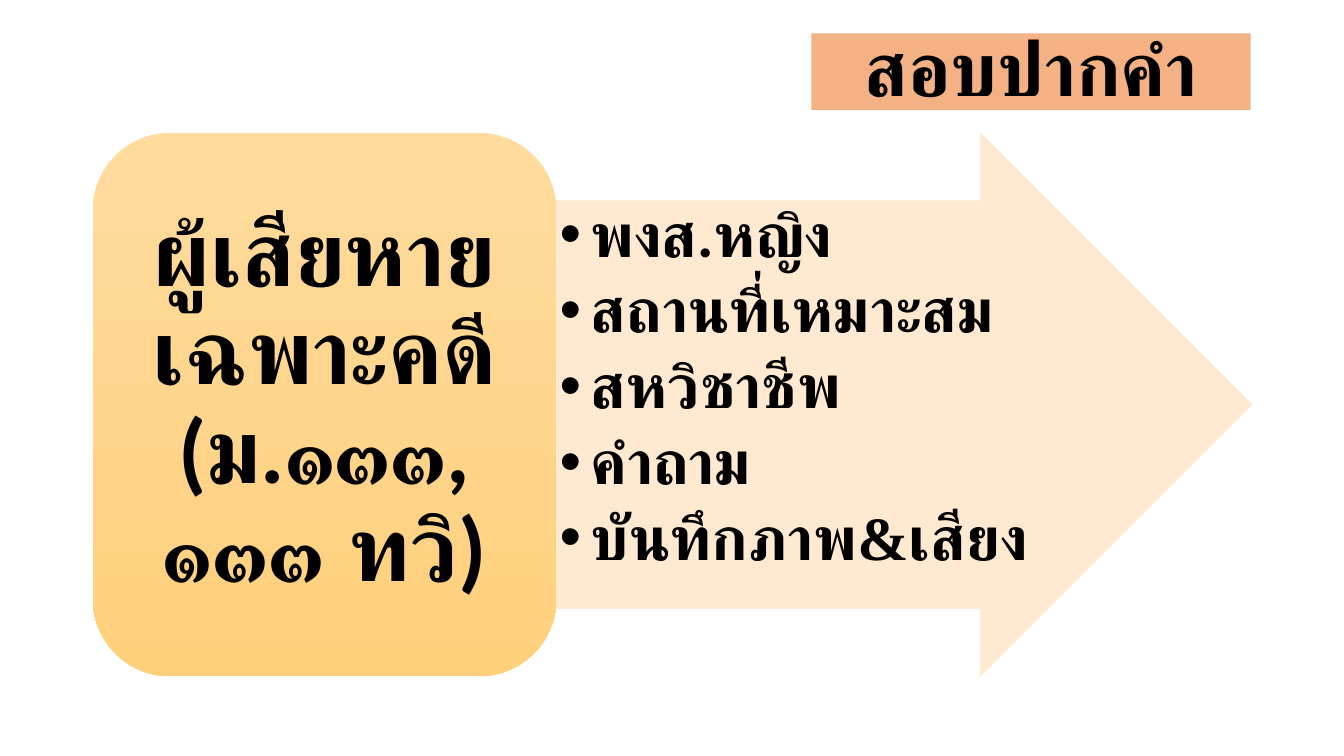
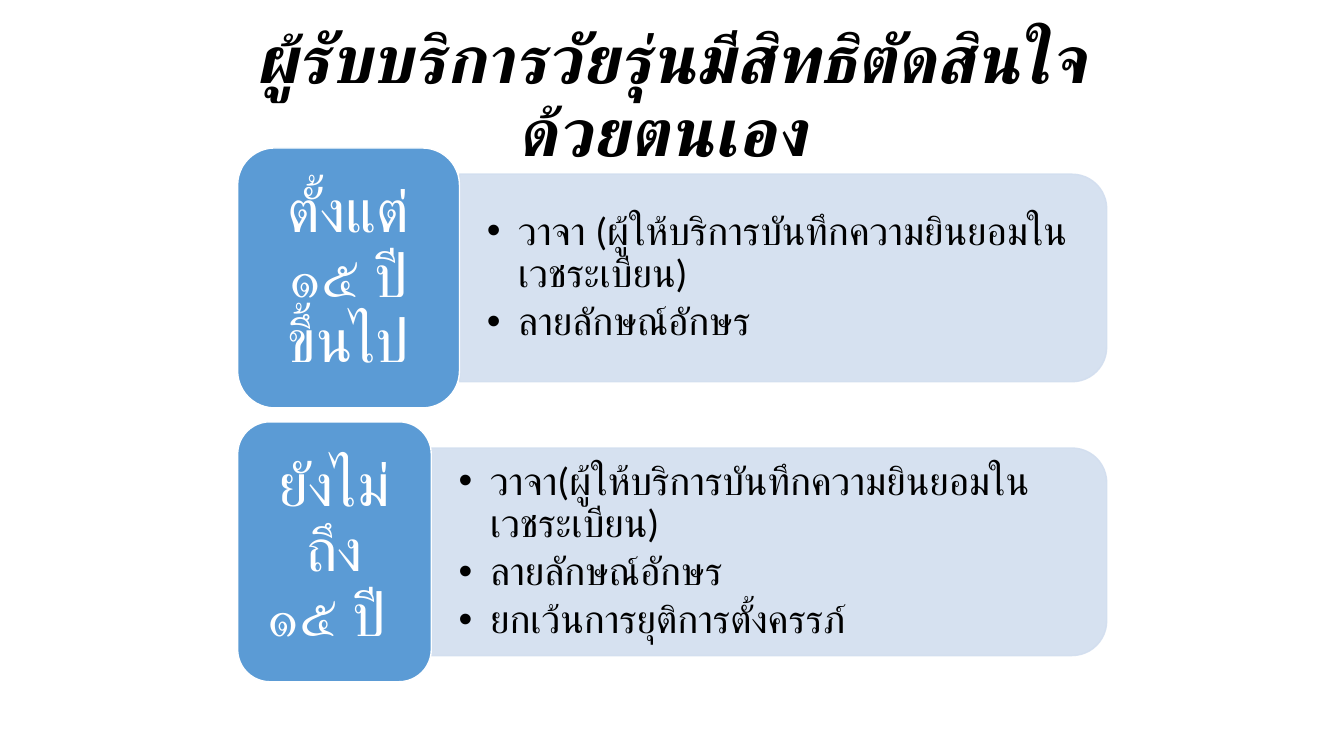
from lxml.etree import SubElement
from pptx import Presentation
from pptx.dml.color import RGBColor
from pptx.enum.lang import MSO_LANGUAGE_ID
from pptx.enum.shapes import MSO_SHAPE
from pptx.enum.text import MSO_ANCHOR, MSO_AUTO_SIZE, PP_ALIGN
from pptx.oxml.ns import qn
from pptx.util import Cm, Pt

COLORS = {
    "text": "000000",
    "white": "FFFFFF",
    "title_band": "F4B183",
    "arrow": "FFE8CC",
    "victim_top": "FFDB9E",
    "victim_bottom": "FFD07C",
    "age": "5B9BD5",
    "panel": "D2DEEF",
}
FONT = "Calibri"
SYMBOL_FONT = "Times New Roman"
LIST_INDENT = Cm(0.79)
TITLE_AND_CONTENT, TWO_CONTENT = 1, 3


def color(name):
    return RGBColor.from_string(COLORS[name])


def place(shape, left, top, width, height):
    shape.left, shape.top = Cm(left), Cm(top)
    shape.width, shape.height = Cm(width), Cm(height)


def add_bullet(paragraph):
    properties = paragraph._p.get_or_add_pPr()
    properties.set("marL", str(LIST_INDENT))
    properties.set("indent", str(-LIST_INDENT))
    SubElement(properties, qn("a:buFont"), typeface="Arial")
    SubElement(properties, qn("a:buChar"), char="•")


def write_text(shape, paragraphs, size, ink="text", bold=False, italic=False,
               align=PP_ALIGN.CENTER, anchor=MSO_ANCHOR.MIDDLE,
               inset=(0.25, 0.13), after=0.0, bullets=False):
    frame = shape.text_frame
    frame.word_wrap = True
    frame.auto_size = MSO_AUTO_SIZE.NONE
    frame.vertical_anchor = anchor
    frame.margin_left = frame.margin_right = Cm(inset[0])
    frame.margin_top = frame.margin_bottom = Cm(inset[1])
    for index, content in enumerate(paragraphs):
        paragraph = frame.add_paragraph() if index else frame.paragraphs[0]
        if isinstance(content, str):
            paragraph.text = content
        else:
            for part in content:
                paragraph.add_run().text = part
        paragraph.alignment = align
        paragraph.line_spacing = 0.9
        paragraph.space_before = Pt(0)
        paragraph.space_after = Pt(round(size * after, 1))
        if bullets:
            add_bullet(paragraph)
        for run in paragraph.runs:
            font = run.font
            font.name = SYMBOL_FONT if run.text == "&" else FONT
            font.size = Pt(size)
            font.bold, font.italic = bold, italic
            font.color.rgb = color(ink)
            font.language_id = MSO_LANGUAGE_ID.THAI


def add_block(slide, kind, box, fill, line=None, line_width=1.0, opacity=100):
    shape = slide.shapes.add_shape(kind, *map(Cm, box))
    shape.shadow.inherit = False
    shape.fill.solid()
    shape.fill.fore_color.rgb = color(fill)
    if line:
        shape.line.color.rgb = color(line)
        shape.line.width = Pt(line_width)
    else:
        shape.line.fill.background()
    if opacity < 100:
        for tint in shape.element.spPr.iter(qn("a:srgbClr")):
            SubElement(tint, qn("a:alpha"), val=str(opacity * 1000))
    return shape


def add_title(slide, text, box, size, italic=False):
    title = slide.shapes.title
    place(title, *box)
    write_text(title, [text], size, bold=True, italic=italic)
    return title


def add_list(slide, number, items, box, size, **text_format):
    body = slide.placeholders[number]
    place(body, *box)
    write_text(body, items, size, align=PP_ALIGN.LEFT, after=0.15,
               bullets=True, **text_format)
    body.element.getparent().append(body.element)


def add_age_row(slide, number, top, age, age_width, items):
    left, right, height, panel_height = 5.99, 27.89, 6.55, 5.23
    panel_left = left + age_width
    panel_width = right - panel_left
    middle = top + height / 2
    center = panel_left + panel_width / 2
    upright_box = (center - panel_height / 2, middle - panel_width / 2,
                   panel_height, panel_width)
    panel = add_block(slide, MSO_SHAPE.ROUND_2_SAME_RECTANGLE, upright_box,
                      "panel", line="panel", opacity=90)
    panel.rotation = 90
    list_height = 4.72
    add_list(slide, number, items,
             (panel_left, middle - list_height / 2, panel_width - 0.26, list_height),
             28, inset=(0.69, 0.36))
    age_block = add_block(slide, MSO_SHAPE.ROUNDED_RECTANGLE,
                          (left, top, age_width, height), "age", line="white")
    write_text(age_block, [age], 43, ink="white", inset=(0.46, 0.23), after=0.35)


def build_interview(presentation):
    slide = presentation.slides.add_slide(presentation.slide_layouts[TITLE_AND_CONTENT])
    title = add_title(slide, "สอบปากคำ", (20.45, 0.84, 11.07, 1.93), 54)
    title.fill.solid()
    title.fill.fore_color.rgb = color("title_band")

    left, top, width, height = 2.34, 3.35, 11.68, 13.69
    arrow_left = left + width
    arrow = add_block(slide, MSO_SHAPE.RIGHT_ARROW, (arrow_left, top, 17.53, height),
                      "arrow", line="arrow", line_width=0.5, opacity=90)
    arrow.adjustments[0], arrow.adjustments[1] = 0.75, 0.5
    add_list(slide, 1,
             ["พงส.หญิง", "สถานที่เหมาะสม", "สหวิชาชีพ", "คำถาม",
              ("บันทึกภาพ", "&", "เสียง")],
             (arrow_left, top + height / 8, 12.4, height * 0.75), 44,
             bold=True, anchor=MSO_ANCHOR.TOP, inset=(0.08, 0.08))

    victim = add_block(slide, MSO_SHAPE.ROUNDED_RECTANGLE,
                       (left, top, width, height), "victim_top")
    victim.fill.gradient()
    victim.fill.gradient_angle = 270
    for stop, name in zip(victim.fill.gradient_stops, ("victim_top", "victim_bottom")):
        stop.color.rgb = color(name)
    write_text(victim, ["ผู้เสียหาย เฉพาะคดี\n(ม.๑๓๓, ๑๓๓ ทวิ)"], 65,
               bold=True, inset=(0.69, 0.36), after=0.35)


def build_consent(presentation):
    slide = presentation.slides.add_slide(presentation.slide_layouts[TWO_CONTENT])
    add_title(slide, "ผู้รับบริการวัยรุ่นมีสิทธิตัดสินใจด้วยตนเอง ",
              (5.97, 1.02, 21.89, 2.92), 48, italic=True)
    rows = [
        ("ตั้งแต่ ๑๕ ปี ขึ้นไป", 5.59,
         ["วาจา (ผู้ให้บริการบันทึกความยินยอมในเวชระเบียน)", "ลายลักษณ์อักษร"]),
        ("ยังไม่ถึง ๑๕ ปี ", 4.88,
         ["วาจา(ผู้ให้บริการบันทึกความยินยอมในเวชระเบียน)", "ลายลักษณ์อักษร",
          "ยกเว้นการยุติการตั้งครรภ์"]),
    ]
    for index, row in enumerate(rows):
        add_age_row(slide, index + 1, 3.73 + index * 6.9, *row)


def main():
    presentation = Presentation()
    presentation.slide_width, presentation.slide_height = Cm(33.87), Cm(19.05)
    build_interview(presentation)
    build_consent(presentation)
    presentation.save("out.pptx")


if __name__ == "__main__":
    main()
